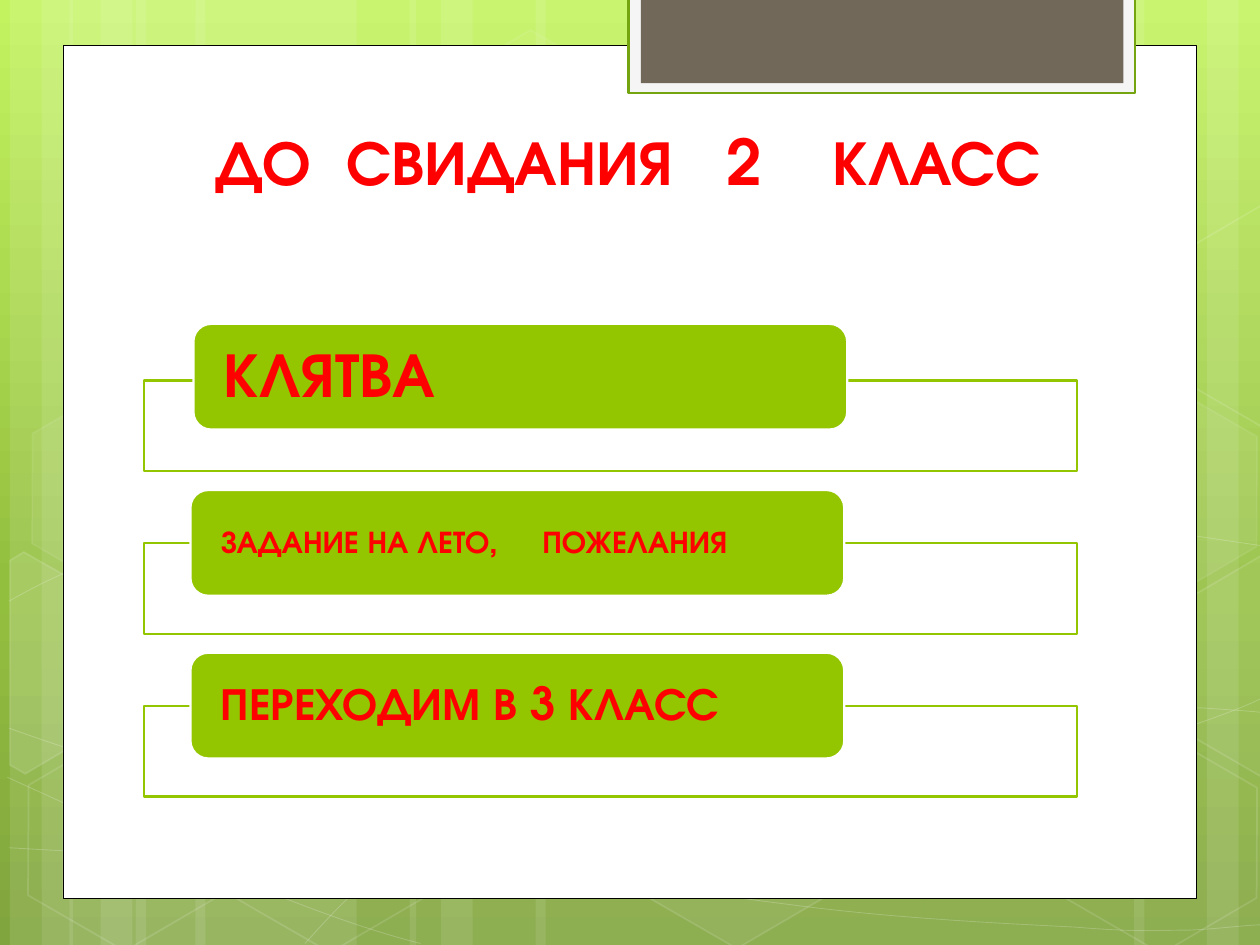
from lxml.etree import SubElement
from pptx import Presentation
from pptx.dml.color import RGBColor
from pptx.enum.shapes import MSO_SHAPE as Kind
from pptx.enum.text import MSO_ANCHOR as Anchor, PP_ALIGN as Align
from pptx.oxml.ns import qn
from pptx.oxml.xmlchemy import OxmlElement as Node
from pptx.util import Cm, Pt

FONT = "TeX Gyre Adventor"
WHITE, GREEN, RED = "FFFFFF", "94C600", "FF0000"
WIDE, HIGH = 25.4, 19.05

# Left edge and width of each light stripe
STRIPES = [
    (2.74, 4.45), (0.2, 1.27), (0.84, 2.11), (3.94, 4.45), (1.4, 1.27), (2.03, 2.11),
    (18.62, 4.45), (24.33, 1.27), (22.86, 2.11), (10.8, 7.82), (8.26, 1.27), (8.89, 2.11),
]
# Bezier chains: a start, then three points for each piece; None, None marks a straight piece
CURVES = [
    [(0.18, 17.09), (1.55, 17.17), (2.92, 17.25), (4.83, 17.22), (6.73, 17.2),
     (9.09, 17.15), (11.63, 16.89), (14.17, 16.64), (17.78, 16.15), (20.12, 15.67),
     (22.43, 15.19), (24.82, 14.43), (25.58, 14)],
    [(0.18, 12.12), (0.91, 11.71), (1.65, 11.33), (3.07, 10.95), (4.52, 10.57),
     (6.58, 10.01), (8.81, 9.83), (11.07, 9.65), (13.82, 9.63), (16.61, 9.83),
     (19.41, 10.03), (24.05, 10.82), (25.58, 11.02)],
    [(0.15, 15.67), (3.23, 17.07), (6.27, 18.47), (8.48, 19.02)],
    [(0.18, 14.68), (0.97, 14.96), (1.78, 15.24), (3.25, 15.65), (4.72, 16.03),
     (6.93, 16.66), (9.07, 17.09), (11.18, 17.53), (13.84, 17.98), (15.95, 18.24),
     (18.06, 18.52), (20.32, 18.62), (21.67, 18.69), (22.99, 18.8), (23.34, 18.75),
     (24, 18.75), (24.66, 18.72), (25.12, 18.64), (25.58, 18.64)],
    [(6.15, 19.02), (6.6, 18.52), (7.06, 18.01), (7.67, 17.55), (8.28, 17.09),
     (9.14, 16.59), (9.86, 16.23), (10.57, 15.88), (11, 15.72), (11.94, 15.47),
     (12.85, 15.21), (14.55, 14.86), (15.44, 14.68), (16.36, 14.5), (16.48, 14.5),
     (17.27, 14.45), (18.06, 14.38), (19.3, 14.3), (20.17, 14.27), (21.06, 14.25),
     (22.5, 14.27), (22.5, 14.27), None, None, (24.21, 14.27), (24.66, 14.3),
     (25.1, 14.33), (25.32, 14.35), (25.55, 14.38), (25.48, 14.35), (25.55, 14.38)],
]
# Left, top, fill opacity and line opacity of each whole hexagon
HEXES = [
    (8.48, 0.91, 4, 8), (12.62, 14.96, 6, 12), (0.28, 15.01, 0, 12), (0.36, 7.92, 7, 8),
    (4.42, 15.04, 0, 12), (19.13, 11.51, 10, 12), (21.18, 15.06, 0, 12), (21.18, 7.98, 7, 8),
]
# Fill opacity and corners of each hexagon cut by the slide edge
CUTS = [
    (10, [(0.2, 11.3), (0.48, 11.13), (2.44, 12.24), (2.41, 14.48), (0.51, 15.6), (0.2, 15.42)]),
    (4, [(23.52, 12.32), (25.43, 11.2), (25.63, 11.33), (25.63, 15.57), (25.45, 15.67),
         (23.52, 14.55)]),
    (0, [(23.52, 5.26), (25.43, 4.14), (25.65, 4.27), (25.63, 8.51), (25.45, 8.61),
         (23.52, 7.49)]),
]
# Text pieces, font size, and the tab's place relative to its frame
CARDS = [
    (["КЛЯТВА"], 36, 1, -1.14),
    (["ЗАДАНИЕ НА ЛЕТО,", 5, "ПОЖЕЛАНИЯ"], 18, 0.94, -1.07),
    (["ПЕРЕХОДИМ В 3 КЛАСС"], 26, 0.94, -1.07),
]


def color(code):
    return RGBColor.from_string(code)


def fade(shape, query, alpha):
    for node in shape.element.spPr.xpath(query):
        SubElement(node, qn("a:alpha")).set("val", str(alpha * 1000))


def paint(shape, fill=None, line=None, width=1.25, solid=100, ink=100):
    """Set fill and line; solid and ink are their opacities in percent."""
    shape.shadow.inherit = False
    if fill and solid:
        shape.fill.solid()
        shape.fill.fore_color.rgb = color(fill)
        if solid < 100:
            fade(shape, "./a:solidFill/a:srgbClr", solid)
    else:
        shape.fill.background()
    if line:
        shape.line.color.rgb = color(line)
        shape.line.width = Pt(width)
        if ink < 100:
            fade(shape, "./a:ln/a:solidFill/a:srgbClr", ink)
    else:
        shape.line.fill.background()
    return shape


def add(slide, kind, box, *look, **more):
    shape = slide.shapes.add_shape(kind, *map(Cm, box))
    return paint(shape, *look, **more)


def trace(slide, points, close):
    first, *rest = [(Cm(x), Cm(y)) for x, y in points]
    build = slide.shapes.build_freeform(*first)
    build.add_line_segments(rest, close=close)
    return build.convert_to_shape()


def bend(slide, chain):
    """Trace a chain, then join each three line ends into one Bezier piece."""
    shape = trace(slide, filter(None, chain), False)
    ends = iter(shape.element.spPr.xpath(".//a:lnTo"))
    for i in range(1, len(chain), 3):
        if chain[i] is None:
            next(ends)
            continue
        trio = [next(ends) for _ in range(3)]
        curve = Node("a:cubicBezTo")
        trio[0].addprevious(curve)
        for end in trio:
            curve.append(end[0])
            end.getparent().remove(end)
    return shape


def write(frame, parts, size, align, anchor):
    """Add runs; a number among the parts is a gap that many spaces wide."""
    frame.word_wrap = True
    frame.vertical_anchor = anchor
    para = frame.paragraphs[0]
    para.alignment = align
    for part in parts:
        run = para.add_run()
        font = run.font
        font.name, font.size, font.bold = FONT, Pt(size), True
        font.color.rgb = color(RED)
        if isinstance(part, int):
            run.text = " "
            run._r.get_or_add_rPr().set("spc", str((part - 1) * size * 28))
        else:
            run.text = part
    return para


def backdrop(slide):
    fill = slide.background.fill
    fill.gradient()
    fill.gradient_angle = 270
    stops = slide.element.find(".//" + qn("a:gsLst"))
    for old in list(stops):
        stops.remove(old)
    for place, code in ((0, "C3F35F"), (62, "93BF3F"), (100, "81A53E")):
        stop = SubElement(stops, qn("a:gs"))
        stop.set("pos", str(place * 1000))
        SubElement(stop, qn("a:srgbClr")).set("val", code)

    for left, wide in STRIPES:
        add(slide, Kind.RECTANGLE, (left, 0, wide, HIGH), WHITE, solid=10)
    for chain in CURVES:
        paint(bend(slide, chain), None, WHITE, 0.5, ink=20)
    for left, top, solid, ink in HEXES:
        hexa = add(slide, Kind.HEXAGON, (left, top, 4.45, 3.86), WHITE, WHITE, 1, solid, ink)
        hexa.adjustments[0] = 0.285
        hexa.rotation = 30
    for solid, points in CUTS:
        paint(trace(slide, points, True), WHITE, WHITE, 1, solid, 12)


def panel(slide, left, top, wide, high):
    add(slide, Kind.RECTANGLE, (left, top, wide, high), WHITE, "000000", 0.5)
    add(slide, Kind.RECTANGLE, (left + 11.4, -0.05, 10.21, 1.93), "F5F5F5", "74A510")
    add(slide, Kind.RECTANGLE, (left + 11.65, -0.05, 9.73, 1.73), "71685A")


def title(slide, *box):
    frame = slide.shapes.add_textbox(*map(Cm, box)).text_frame
    parts = ["ДО", 2, "СВИДАНИЯ", 3, "2", 4, "КЛАСС"]
    write(frame, parts, 36, Align.CENTER, Anchor.BOTTOM)


def cards(slide, left, top, wide, pitch):
    for i, (parts, size, right, down) in enumerate(CARDS):
        y = top + i * pitch
        add(slide, Kind.RECTANGLE, (left, y, wide, 1.83), WHITE, GREEN, solid=90)
        tab = add(slide, Kind.ROUNDED_RECTANGLE, (left + right, y + down, 13.18, 2.13),
                  GREEN, WHITE)
        frame = tab.text_frame
        frame.margin_left = frame.margin_right = Cm(0.51)
        frame.margin_top = frame.margin_bottom = 0
        write(frame, parts, size, Align.LEFT, Anchor.MIDDLE).line_spacing = 0.9


def main():
    deck = Presentation()
    deck.slide_width, deck.slide_height = Cm(WIDE), Cm(HIGH)
    slide = deck.slides.add_slide(deck.slide_layouts[6])
    backdrop(slide)
    panel(slide, 1.27, 0.91, 22.86, 17.2)
    title(slide, 2.9, 2.11, 19.51, 2.01)
    cards(slide, 2.9, 7.67, 18.82, 3.28)
    deck.save("out.pptx")


if __name__ == "__main__":
    main()
